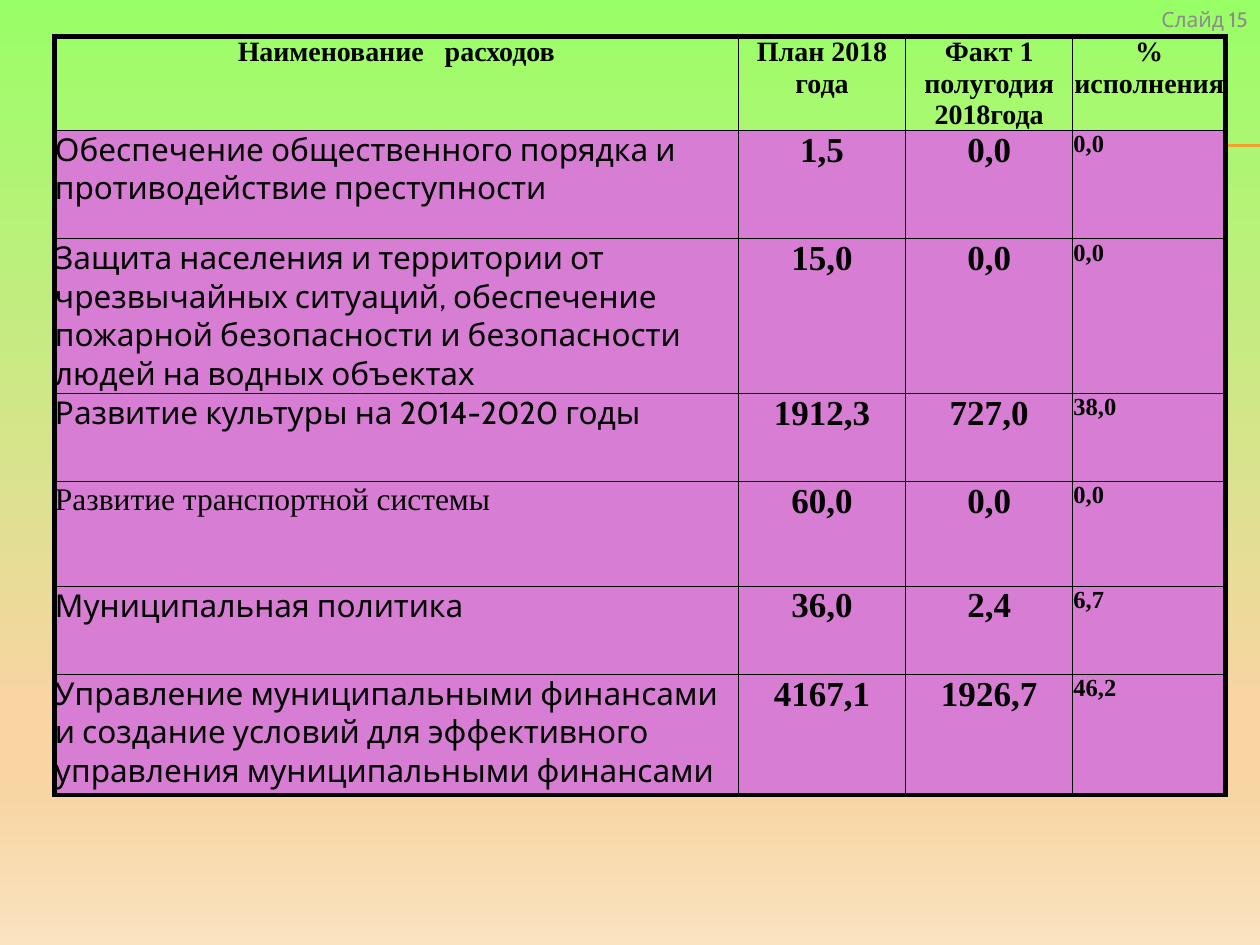
"""Build a slide with a table of planned and actual budget spending."""
from lxml.etree import SubElement
from pptx import Presentation
from pptx.dml.color import RGBColor
from pptx.enum.shapes import MSO_CONNECTOR
from pptx.enum.text import MSO_ANCHOR, PP_ALIGN
from pptx.oxml.ns import qn
from pptx.util import Pt

SERIF, SANS = "Times New Roman", "Cabin"
BLACK, GREY, ORANGE, PINK = "000000", "8C8C8C", "F0A22E", "D77DD3"
STOPS = [(0, "99FF66"), (74, "F8D5A1"), (83, "F8D5A1"), (100, "FAE3C0")]
HEADER = ["Наименование   расходов", "План 2018 года", "Факт 1 полугодия 2018года", "% исполнения"]
EXPENSES = [
    ("Обеспечение общественного порядка и противодействие преступности", "1,5", "0,0", "0,0"),
    ("Защита населения и территории от чрезвычайных ситуаций, обеспечение пожарной "
     "безопасности и безопасности людей на водных объектах", "15,0", "0,0", "0,0"),
    ("Развитие культуры на 2014-2020 годы", "1912,3", "727,0", "38,0"),
    ("Развитие транспортной системы", "60,0", "0,0", "0,0"),
    ("Муниципальная политика", "36,0", "2,4", "6,7"),
    ("Управление муниципальными финансами и создание условий для эффективного управления "
     "муниципальными финансами", "4167,1", "1926,7", "46,2"),
]
SERIF_NAMES = {"Развитие транспортной системы"}
COL_WIDTHS = [391, 95.5, 95.5, 87.4]
ROW_HEIGHTS = [46.8, 61.9, 78.5, 50.4, 59.8, 50.4, 69.1]
CENTER, LEFT, RIGHT = PP_ALIGN.CENTER, PP_ALIGN.LEFT, PP_ALIGN.RIGHT
COLUMN_STYLES = [(18, False, LEFT), (20, True, CENTER), (20, True, CENTER), (14, True, LEFT)]


def rgb(color):
    return RGBColor.from_string(color)


def add_solid(parent, color):
    fill = SubElement(parent, qn("a:solidFill"))
    SubElement(fill, qn("a:srgbClr"), val=color)


def set_text(tf, text, font, size, bold, align, color=BLACK):
    tf.text = text
    p = tf.paragraphs[0]
    p.alignment = align
    f = p.runs[0].font
    f.name, f.size, f.bold = font, Pt(size), bold
    f.color.rgb = rgb(color)


def set_background(slide):
    fill = slide.background.fill
    fill.gradient()
    fill.gradient_angle = 270
    stops = slide.background._cSld.find(".//" + qn("a:gsLst"))
    for gs in list(stops):
        stops.remove(gs)
    for pos, color in STOPS:
        gs = SubElement(stops, qn("a:gs"), pos=str(pos * 1000))
        SubElement(gs, qn("a:srgbClr"), val=color)


def set_borders(cell, widths):
    tc_pr = cell._tc.get_or_add_tcPr()
    for side, width in zip("LRTB", widths):
        ln = SubElement(tc_pr, qn("a:ln" + side), w=str(Pt(width)))
        add_solid(ln, BLACK)


def add_rule(slide, y):
    line = slide.shapes.add_connector(MSO_CONNECTOR.STRAIGHT, Pt(40.3), Pt(y), Pt(720), Pt(y))
    line.line.color.rgb = rgb(ORANGE)
    line.line.width = Pt(0.75)
    SubElement(line._element.spPr, qn("a:effectLst"))


def add_expense_table(slide):
    rows = [HEADER, *EXPENSES]
    last_row, last_col = len(rows) - 1, len(HEADER) - 1
    table = slide.shapes.add_table(len(rows), len(HEADER), Pt(31), Pt(20.7),
                                   Pt(sum(COL_WIDTHS)), Pt(sum(ROW_HEIGHTS))).table
    table.first_row = table.horz_banding = False
    for col, width in zip(table.columns, COL_WIDTHS):
        col.width = Pt(width)
    for i, (row, height) in enumerate(zip(rows, ROW_HEIGHTS)):
        table.rows[i].height = Pt(height)
        for j, text in enumerate(row):
            cell = table.cell(i, j)
            cell.margin_left = cell.margin_right = cell.margin_top = Pt(0.4)
            cell.margin_bottom = 0
            set_borders(cell, (3 if j == 0 else 1, 3 if j == last_col else 1,
                               3 if i == 0 else 0.5, 3 if i == last_row else 0.5))
            if i == 0:
                cell.fill.background()
                size, bold, align = 16, True, CENTER
            else:
                cell.fill.solid()
                cell.fill.fore_color.rgb = rgb(PINK)
                size, bold, align = COLUMN_STYLES[j]
            sans = i > 0 and j == 0 and text not in SERIF_NAMES
            set_text(cell.text_frame, text, SANS if sans else SERIF, size, bold, align)


def add_slide_number(slide):
    tf = slide.shapes.add_textbox(Pt(649.4), 0, Pt(70.6), Pt(37.4)).text_frame
    tf.word_wrap = True
    tf.vertical_anchor = MSO_ANCHOR.TOP
    set_text(tf, "Слайд 15", SANS, 12, False, RIGHT, GREY)


def main():
    prs = Presentation()
    prs.slide_width, prs.slide_height = Pt(720), Pt(540)
    slide = prs.slides.add_slide(prs.slide_layouts[6])
    set_background(slide)
    for y in (82.8, 83.5):
        add_rule(slide, y)
    add_expense_table(slide)
    add_slide_number(slide)
    prs.save("out.pptx")


if __name__ == "__main__":
    main()
